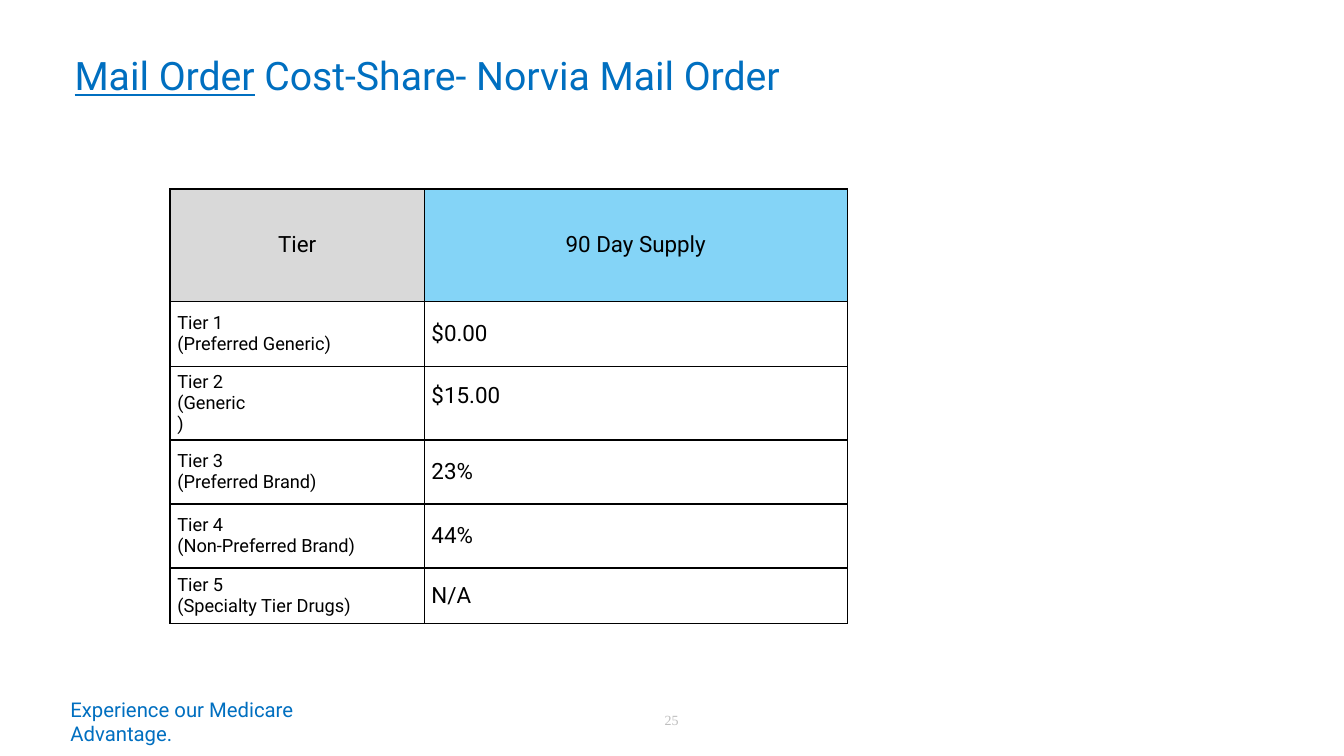
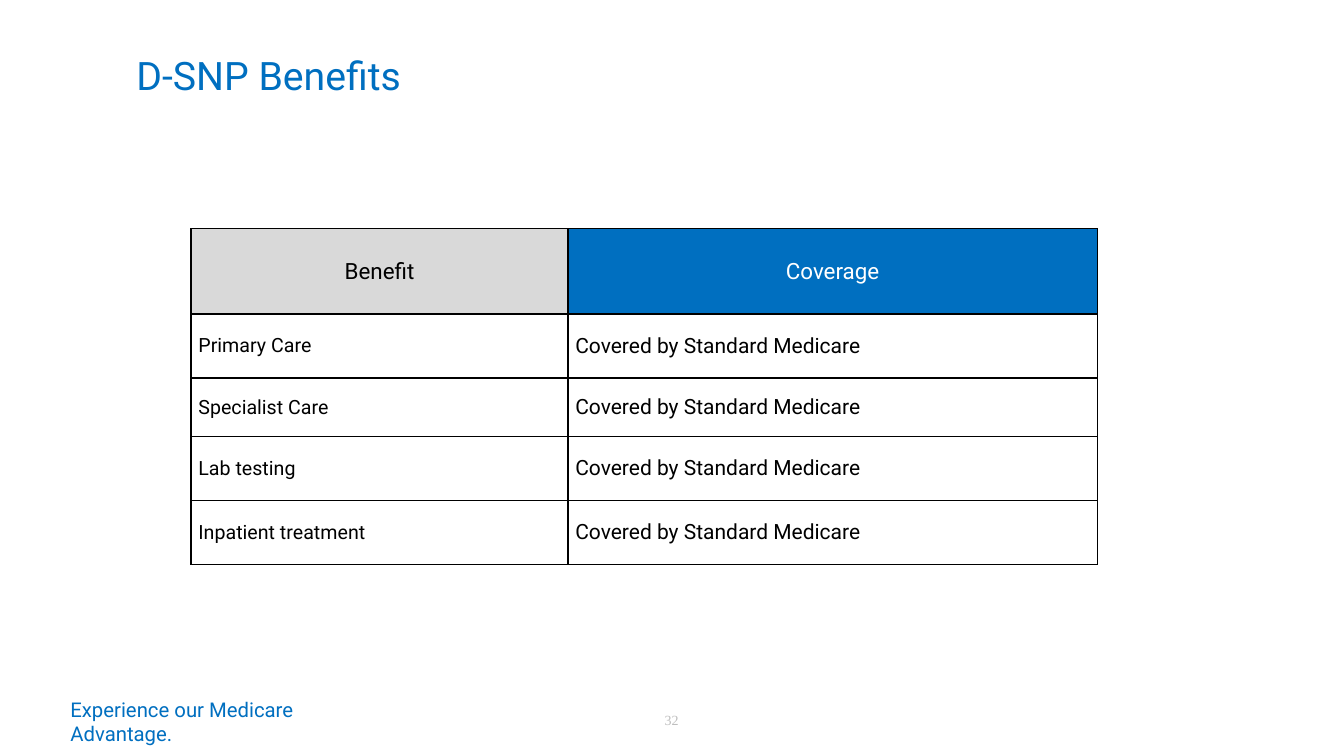
"""Build two Medicare benefit slides, each with a title, a bordered table and a footer."""
from dataclasses import dataclass

from lxml import etree
from pptx import Presentation
from pptx import util as u
from pptx.dml import color as dml
from pptx.enum import text
from pptx.oxml import ns

PX = 9525


@dataclass(frozen=True)
class Theme:
    font: str = "Roboto"
    number_font: str = "Times New Roman"
    blue: str = "006FC0"
    sky: str = "84D4F7"
    grey: str = "D9D9D9"
    pale: str = "BEBEBE"
    black: str = "000000"
    white: str = "FFFFFF"
    title_size: float = 28
    header_size: float = 16
    footer_size: float = 14.5
    number_size: float = 10
    border: float = 1


theme = Theme()


def write(frame, lines, size, color, font=theme.font, align=text.PP_ALIGN.LEFT, spacing=None):
    """Fill a text frame with lines, each a list of (words, underlined) runs."""
    frame.word_wrap = True
    for index, line in enumerate(lines):
        paragraph = frame.add_paragraph() if index else frame.paragraphs[0]
        paragraph.alignment = align
        if spacing:
            paragraph.line_spacing = u.Pt(spacing)
        for words, underlined in line:
            run = paragraph.add_run()
            run.text = words
            run.font.name = font
            run.font.size = u.Pt(size)
            run.font.underline = underlined
            run.font.color.rgb = dml.RGBColor.from_string(color)


def add_text(slide, left, top, width, height, lines, size, color, **style):
    """Add a text box without insets."""
    frame = slide.shapes.add_textbox(left * PX, top * PX, width * PX, height * PX).text_frame
    frame.margin_left = frame.margin_top = frame.margin_right = frame.margin_bottom = 0
    write(frame, lines, size, color, **style)


pages = [
    {
        "title": [("Mail Order", True), (" Cost-Share- Norvia Mail Order", False)],
        "title_left": 71,
        "number": "25",
        "origin": (162, 180),
        "columns": [242, 403],
        "heights": [107, 62, 70, 61, 61, 53],
        "accent": (theme.sky, theme.black),
        "body_sizes": (13, 16),
        "rows": [
            ("Tier", "90 Day Supply"),
            ("Tier 1\n(Preferred Generic)", "$0.00"),
            ("Tier 2 (Generic)", "$15.00"),
            ("Tier 3\n(Preferred Brand)", "23%"),
            ("Tier 4\n(Non-Preferred Brand)", "44%"),
            ("Tier 5\n(Specialty Tier Drugs)", "N/A"),
        ],
        "margins": {(2, 0): (169, 0), (2, 1): (0, 15)},
    },
    {
        "title": [("D-SNP Benefits", False)],
        "title_left": 130,
        "number": "32",
        "origin": (182, 218),
        "columns": [359, 504],
        "heights": [81, 61, 56, 61, 61],
        "accent": (theme.blue, theme.white),
        "body_sizes": (14, 15),
        "rows": [("Benefit", "Coverage")] + [
            (benefit, "Covered by Standard Medicare")
            for benefit in ("Primary Care", "Specialist Care", "Lab testing", "Inpatient treatment")
        ],
        "margins": {},
    },
]

presentation = Presentation()
presentation.slide_width = 1280 * PX
presentation.slide_height = 720 * PX

for page in pages:
    slide = presentation.slides.add_slide(presentation.slide_layouts[6])
    add_text(slide, page["title_left"], 49, 780, 45, [page["title"]], theme.title_size, theme.blue)

    left, top = page["origin"]
    columns, heights = page["columns"], page["heights"]
    table = slide.shapes.add_table(
        len(heights), len(columns), left * PX, top * PX, sum(columns) * PX, sum(heights) * PX
    ).table
    table.first_row = table.horz_banding = False
    for column, width in zip(table.columns, columns):
        column.width = width * PX
    for row, height in zip(table.rows, heights):
        row.height = height * PX

    header_styles = [(theme.grey, theme.black), page["accent"]]
    for row_index, values in enumerate(page["rows"]):
        for column_index, value in enumerate(values):
            cell = table.cell(row_index, column_index)
            right, bottom = page["margins"].get((row_index, column_index), (0, 0))
            cell.margin_left = 7 * PX if row_index else 0
            cell.margin_top = 0
            cell.margin_right, cell.margin_bottom = right * PX, bottom * PX
            cell.vertical_anchor = text.MSO_ANCHOR.MIDDLE

            properties = cell._tc.get_or_add_tcPr()
            for side in ("lnL", "lnR", "lnT", "lnB"):
                border = etree.SubElement(properties, ns.qn(f"a:{side}"), w=str(u.Pt(theme.border)))
                line_fill = etree.SubElement(border, ns.qn("a:solidFill"))
                etree.SubElement(line_fill, ns.qn("a:srgbClr"), val=theme.black)

            if row_index:
                fill, color = theme.white, theme.black
                size, align = page["body_sizes"][column_index], text.PP_ALIGN.LEFT
            else:
                fill, color = header_styles[column_index]
                size, align = theme.header_size, text.PP_ALIGN.CENTER
            cell.fill.solid()
            cell.fill.fore_color.rgb = dml.RGBColor.from_string(fill)
            lines = [[(words, False)] for words in value.split("\n")]
            write(cell.text_frame, lines, size, color, align=align)

    add_text(slide, 67, 664, 304, 25, [[("Experience our Medicare Advantage.", False)]],
             theme.footer_size, theme.blue, spacing=17.3)
    add_text(slide, 633, 678, 20, 17, [[(page["number"], False)]],
             theme.number_size, theme.pale, font=theme.number_font, spacing=11.9)

presentation.save("out.pptx")
